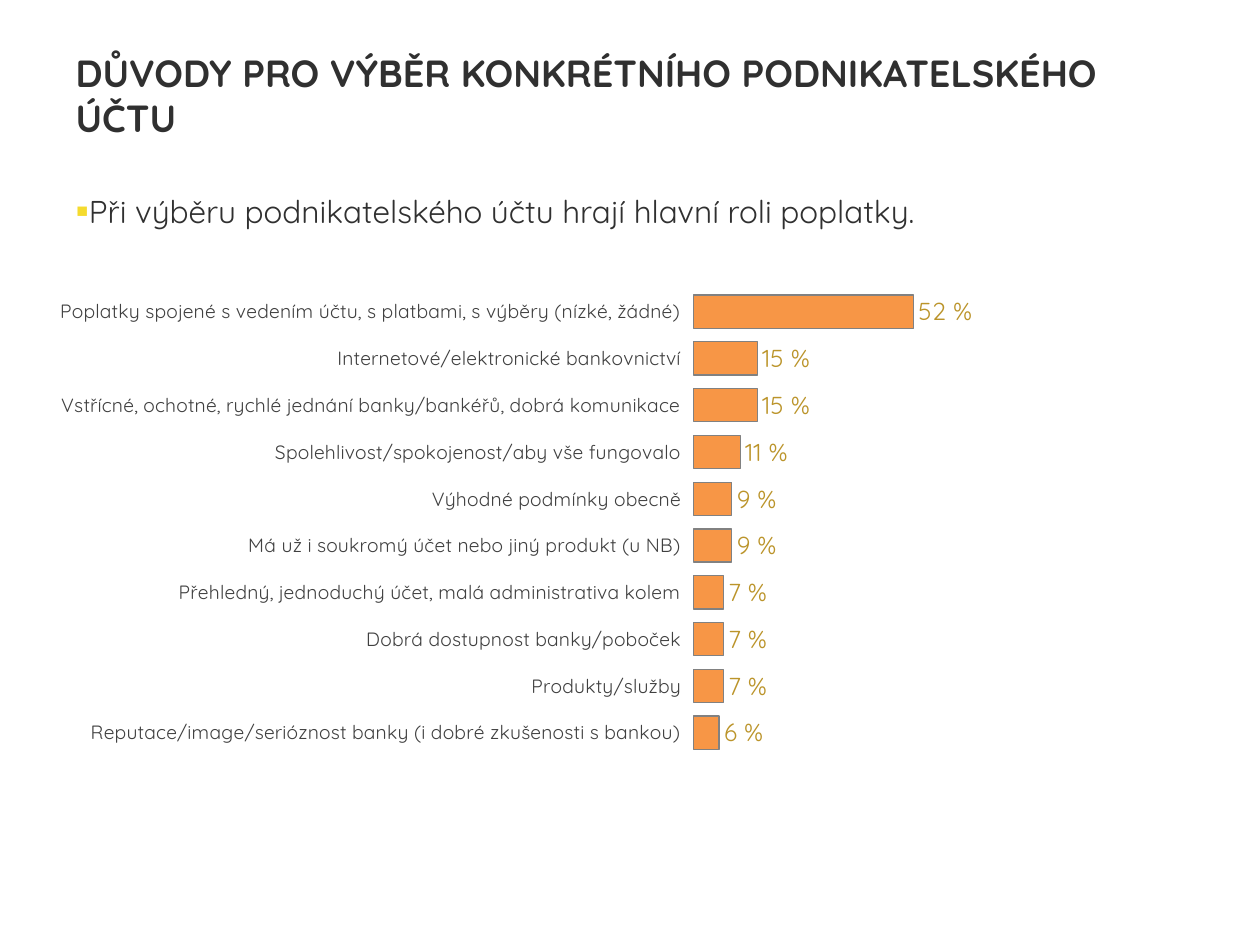
from lxml.etree import fromstring
from pptx import Presentation
from pptx.chart.data import CategoryChartData
from pptx.dml.color import RGBColor
from pptx.enum.chart import XL_CHART_TYPE, XL_LABEL_POSITION, XL_TICK_LABEL_POSITION, XL_TICK_MARK
from pptx.enum.text import MSO_ANCHOR, MSO_AUTO_SIZE, PP_ALIGN
from pptx.oxml import parse_xml
from pptx.util import Pt

FACE = "Quicksand"
DARK = "303030"
DRAWING = "http://schemas.openxmlformats.org/drawingml/2006/main"
CHART = "http://schemas.openxmlformats.org/drawingml/2006/chart"
REASONS = [
    ("Poplatky spojené s vedením účtu, s platbami, s výběry (nízké, žádné)", 52),
    ("Internetové/elektronické bankovnictví", 15),
    ("Vstřícné, ochotné, rychlé jednání banky/bankéřů, dobrá komunikace", 15),
    ("Spolehlivost/spokojenost/aby vše fungovalo", 11),
    ("Výhodné podmínky obecně", 9),
    ("Má už i soukromý účet nebo jiný produkt (u NB)", 9),
    ("Přehledný, jednoduchý účet, malá administrativa kolem", 7),
    ("Dobrá dostupnost banky/poboček", 7),
    ("Produkty/služby", 7),
    ("Reputace/image/serióznost banky (i dobré zkušenosti s bankou)", 6),
]


def color(code):
    return RGBColor.from_string(code)


def style(font, size, code=DARK, bold=False):
    font.name = FACE
    font.size = Pt(size)
    font.bold = bold
    font.color.rgb = color(code)


def place(shape, left, top, width, height):
    shape.left, shape.top = Pt(left), Pt(top)
    shape.width, shape.height = Pt(width), Pt(height)


def add_bullet(para, char, code, percent):
    props = para._p.get_or_add_pPr()
    props.set("marL", "0")
    props.set("indent", "0")
    for tag in (
        f'<a:buClr xmlns:a="{DRAWING}"><a:srgbClr val="{code}"/></a:buClr>',
        f'<a:buSzPct xmlns:a="{DRAWING}" val="{percent * 1000}"/>',
        f'<a:buFont xmlns:a="{DRAWING}" typeface="Arial"/>',
        f'<a:buChar xmlns:a="{DRAWING}" char="{char}"/>',
    ):
        props.append(parse_xml(tag))


def write(shape, text, size, bold=False, anchor=MSO_ANCHOR.TOP, bullet=None):
    frame = shape.text_frame
    frame.word_wrap = True
    frame.auto_size = MSO_AUTO_SIZE.NONE
    frame.vertical_anchor = anchor
    para = frame.paragraphs[0]
    para.alignment = PP_ALIGN.LEFT
    para.space_before = Pt(0)
    if bullet:
        add_bullet(para, *bullet)
    run = para.add_run()
    run.text = text
    style(run.font, size, bold=bold)


def set_plot(chart, left, top, width, height):
    """Fix the inner plot area, in fractions of the chart."""
    area = chart._chartSpace.chart.plotArea
    for old in area.findall(f"{{{CHART}}}layout"):
        area.remove(old)
    sizes = zip("xywh", (left, top, width, height))
    rows = "".join(f'<c:{key} val="{size}"/>' for key, size in sizes)
    area.insert(0, fromstring(
        f'<c:layout xmlns:c="{CHART}"><c:manualLayout><c:layoutTarget val="inner"/>'
        f'<c:xMode val="edge"/><c:yMode val="edge"/>{rows}</c:manualLayout></c:layout>'))


def set_axes(chart):
    axis = chart.category_axis
    axis.reverse_order = True
    axis.major_tick_mark = XL_TICK_MARK.NONE
    axis.minor_tick_mark = XL_TICK_MARK.NONE
    axis.tick_label_position = XL_TICK_LABEL_POSITION.LOW
    axis.format.line.fill.background()
    style(axis.tick_labels.font, 11, "404040")
    scale = chart.value_axis
    scale.minimum_scale, scale.maximum_scale = 0, 100
    scale.has_major_gridlines = False
    scale.visible = False


def add_bars(slide):
    data = CategoryChartData()
    names, shares = zip(*REASONS)
    data.categories = names
    data.add_series("Series 1", shares)
    chart = slide.shapes.add_chart(
        XL_CHART_TYPE.BAR_CLUSTERED, Pt(8.64), Pt(151.2), Pt(697.68), Pt(294.48), data
    ).chart
    chart.has_legend = False
    chart.has_title = False
    style(chart.font, 10)
    set_axes(chart)
    set_plot(chart, 0.556, 0.046, 0.346, 0.908)

    plot = chart.plots[0]
    plot.gap_width = 41
    plot.vary_by_categories = False
    bars = plot.series[0].format
    bars.fill.solid()
    bars.fill.fore_color.rgb = color("F79646")
    bars.line.color.rgb = color("818181")
    bars.line.width = Pt(0.75)

    plot.has_data_labels = True
    labels = plot.data_labels
    labels.show_value = True
    labels.number_format = '0" %"'
    labels.number_format_is_linked = False
    labels.position = XL_LABEL_POSITION.OUTSIDE_END
    style(labels.font, 14, "BB942A")


def main():
    deck = Presentation()
    deck.slide_width, deck.slide_height = Pt(720), Pt(540)
    slide = deck.slides.add_slide(deck.slide_layouts[1])
    title, body = slide.placeholders
    place(title, 36, 31.68, 607.68, 45.36)
    write(title, "DŮVODY PRO VÝBĚR KONKRÉTNÍHO PODNIKATELSKÉHO ÚČTU", 21.6,
          bold=True, anchor=MSO_ANCHOR.MIDDLE)
    place(body, 36, 105.84, 550.8, 419.76)
    write(body, "Při výběru podnikatelského účtu hrají hlavní roli poplatky.", 18,
          bullet=("▪", "F5DB2E", 120))
    add_bars(slide)
    deck.save("out.pptx")


if __name__ == "__main__":
    main()
